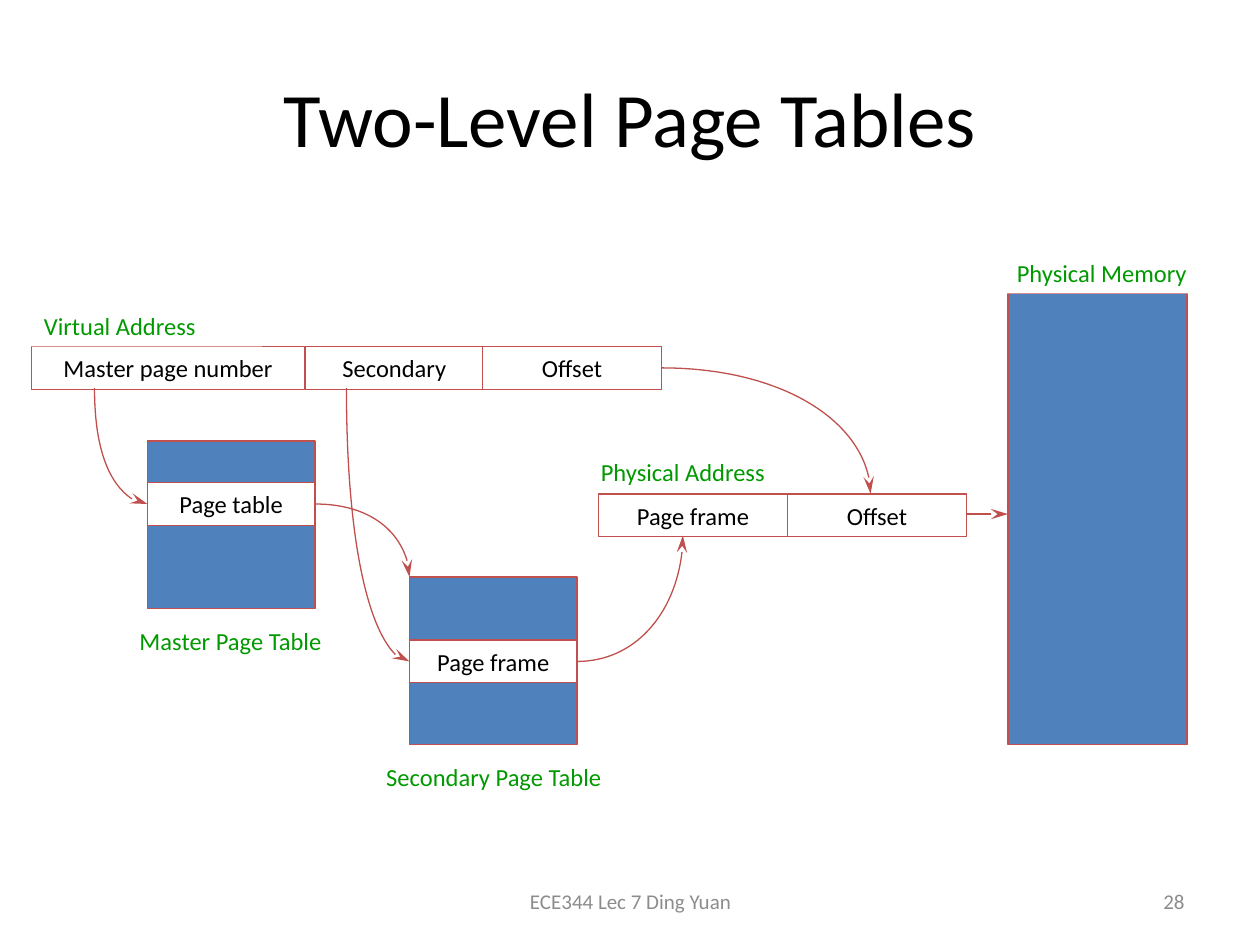
from lxml.etree import SubElement
from pptx import Presentation
from pptx.dml.color import RGBColor
from pptx.enum.shapes import MSO_CONNECTOR, MSO_SHAPE
from pptx.enum.text import MSO_ANCHOR, PP_ALIGN
from pptx.oxml.ns import qn
from pptx.util import Inches, Pt

BLACK = RGBColor(0x00, 0x00, 0x00)
WHITE = RGBColor(0xFF, 0xFF, 0xFF)
GRAY = RGBColor(0x8C, 0x8C, 0x8C)
GREEN = RGBColor(0x00, 0x99, 0x00)
BLUE = RGBColor(0x4F, 0x81, 0xBD)
RED = RGBColor(0xC0, 0x50, 0x4D)

LEFT, CENTER, RIGHT = PP_ALIGN.LEFT, PP_ALIGN.CENTER, PP_ALIGN.RIGHT
ROW_HEIGHT = 0.34
ROUNDNESS = 0.55

prs = Presentation()
prs.slide_width, prs.slide_height = Inches(10), Inches(7.5)
slide = prs.slides.add_slide(prs.slide_layouts[6])
shapes = slide.shapes


def write(shape, text, size, color, align):
    frame = shape.text_frame
    frame.word_wrap = True
    frame.vertical_anchor = MSO_ANCHOR.MIDDLE
    paragraph = frame.paragraphs[0]
    paragraph.text = text
    paragraph.alignment = align
    paragraph.font.name = "Calibri"
    paragraph.font.size = Pt(size)
    paragraph.font.color.rgb = color


def add_box(left, top, width, height, fill, outlined=True):
    box = shapes.add_shape(MSO_SHAPE.RECTANGLE, Inches(left), Inches(top),
                           Inches(width), Inches(height))
    box.shadow.inherit = False
    box.fill.solid()
    box.fill.fore_color.rgb = fill
    if outlined:
        box.line.color.rgb = RED
        box.line.width = Pt(0.75)
    else:
        box.line.fill.background()
    return box


for text, left, top, width, height, size, color, align in [
    ("Two-Level Page Tables", 0.5, 0.3, 9, 1.25, 44, BLACK, CENTER),
    ("ECE344 Lec 7 Ding Yuan", 3.42, 6.95, 3.17, 0.4, 12, GRAY, CENTER),
    ("28", 7.17, 6.95, 2.33, 0.4, 12, GRAY, RIGHT),
]:
    box = shapes.add_textbox(Inches(left), Inches(top), Inches(width), Inches(height))
    write(box, text, size, color, align)

for left, top, width, height in [
    (8, 2.33, 1.42, 3.58),
    (1.17, 3.5, 1.33, 1.33),
    (3.25, 4.58, 1.33, 1.33),
]:
    add_box(left, top, width, height, BLUE)

for text, left, top, width in [
    ("Page table", 1.17, 3.83, 1.33),
    ("Master page number", 0.25, 2.75, 2.17),
    ("Secondary", 2.42, 2.75, 1.42),
    ("Offset", 3.83, 2.75, 1.42),
    ("Page frame", 4.75, 3.92, 1.5),
    ("Offset", 6.25, 3.92, 1.42),
    ("Page frame", 3.25, 5.08, 1.33),
]:
    write(add_box(left, top, width, ROW_HEIGHT, WHITE), text, 14, BLACK, CENTER)

for text, left, top, width, align in [
    ("Virtual Address", 0.25, 2.42, 1.83, LEFT),
    ("Physical Address", 4.67, 3.58, 1.83, LEFT),
    ("Physical Memory", 7.83, 2, 1.83, CENTER),
    ("Master Page Table", 0.83, 4.92, 2, CENTER),
    ("Secondary Page Table", 2.67, 6, 2.5, CENTER),
]:
    label = add_box(left, top, width, 0.33, WHITE, outlined=False)
    write(label, text, 14, GREEN, align)

arrows = [shapes.add_connector(MSO_CONNECTOR.STRAIGHT, Inches(7.67), Inches(4.08),
                               Inches(8), Inches(4.08))]
SubElement(arrows[0]._element.spPr, qn("a:effectLst"))

for side_x, side_y, edge_x, edge_y, ends_at_side in [
    (5.25, 2.92, 6.91, 3.92, False),
    (1.17, 4, 0.75, 3.08, True),
    (4.58, 5.25, 5.42, 4.25, False),
    (3.25, 5.25, 2.75, 3.08, True),
    (2.5, 4, 3.25, 4.58, False),
]:
    points = [(Inches(x), Inches(y)) for x, y in [
        (side_x, side_y),
        (side_x + ROUNDNESS * (edge_x - side_x), side_y),
        (edge_x, edge_y + ROUNDNESS * (side_y - edge_y)),
        (edge_x, edge_y),
    ]]
    if ends_at_side:
        points.reverse()
    builder = shapes.build_freeform(*points[0])
    builder.add_line_segments(points[1:], close=False)
    curve = builder.convert_to_shape()
    segments = list(curve._element.iter(qn("a:lnTo")))
    bezier = SubElement(segments[0].getparent(), qn("a:cubicBezTo"))
    for segment in segments:
        bezier.append(segment[0])
        segment.getparent().remove(segment)
    curve.shadow.inherit = False
    curve.fill.background()
    arrows.append(curve)

for arrow in arrows:
    arrow.line.color.rgb = RED
    arrow.line.width = Pt(0.75)
    SubElement(arrow.line._get_or_add_ln(), qn("a:tailEnd"),
               type="stealth", w="med", len="lg")

prs.save("out.pptx")
